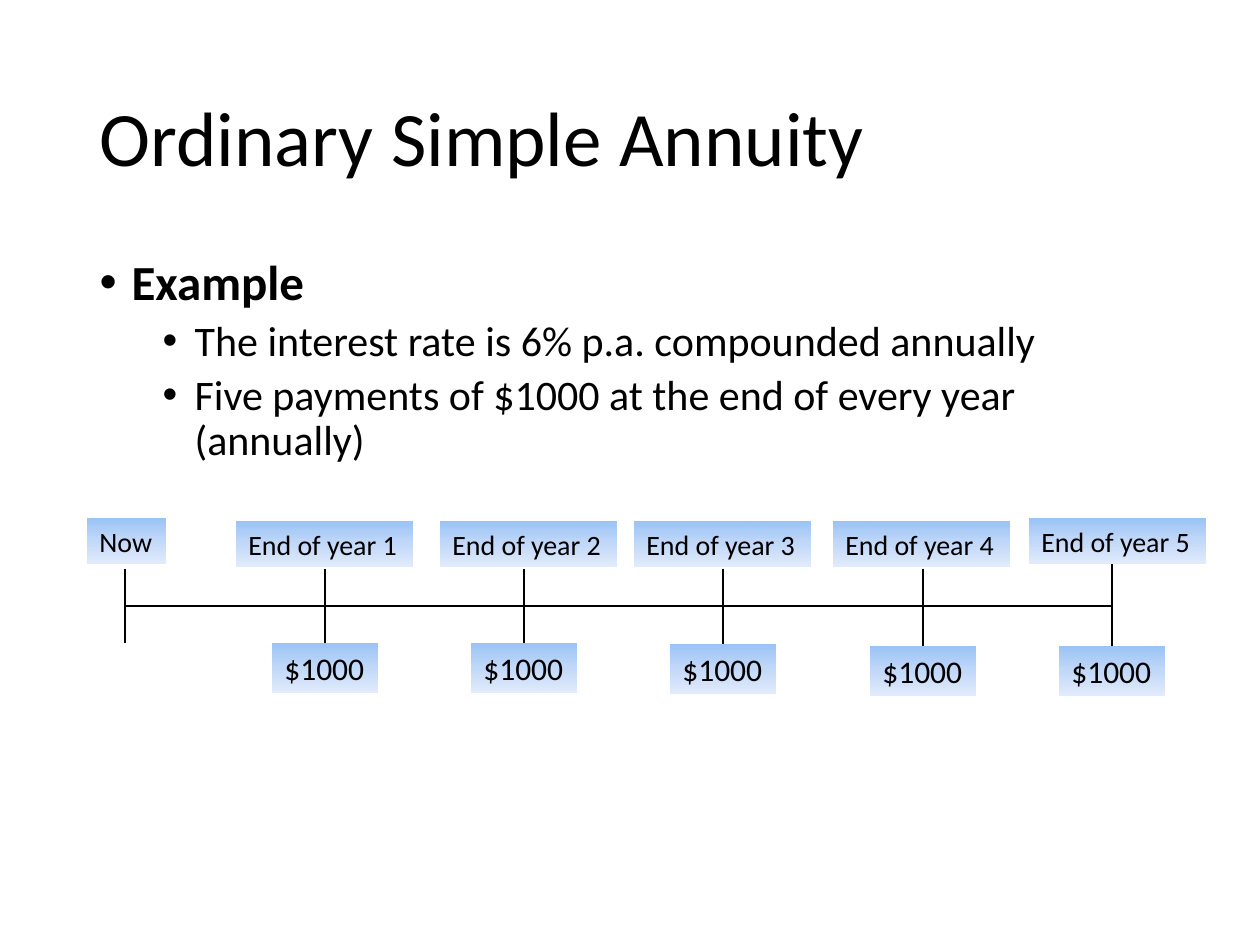
from copy import deepcopy
from dataclasses import dataclass

from lxml import etree
from pptx import Presentation
from pptx.dml.color import RGBColor
from pptx.enum.shapes import MSO_CONNECTOR, MSO_SHAPE
from pptx.enum.text import MSO_ANCHOR, MSO_AUTO_SIZE, PP_ALIGN
from pptx.oxml.ns import qn
from pptx.util import Pt

RECTANGLE = MSO_SHAPE.RECTANGLE
STRAIGHT = MSO_CONNECTOR.STRAIGHT
LEFT = PP_ALIGN.LEFT
MIDDLE = MSO_ANCHOR.MIDDLE
FIT_SHAPE = MSO_AUTO_SIZE.SHAPE_TO_FIT_TEXT
NO_FIT = MSO_AUTO_SIZE.NONE
TOP_SIDE = 0
PX_PER_INCH = 126


def px(length):
    """Turn pixels into EMU."""
    return round(length * 914400 / PX_PER_INCH)


@dataclass(frozen=True)
class Theme:
    font: str = "Calibri"
    ink: str = "000000"
    gradient: tuple = ((0, "9AC3F5"), (0.5, "C2D8F8"), (1, "E1EBFB"))
    title: int = 44
    heading: int = 28
    item: int = 24
    payment: int = 18
    label: int = 16
    rule: float = 0.75


def write(para, text, theme, size, bold=False, spacing=None, before=None):
    """Fill a paragraph with one formatted span of text."""
    para.alignment = LEFT
    if spacing is not None:
        para.line_spacing = spacing
    if before is not None:
        para.space_before = Pt(before)
    span = para.add_run()
    span.text = text
    span.font.name = theme.font
    span.font.size = Pt(size)
    span.font.bold = bold
    span.font.color.rgb = RGBColor.from_string(theme.ink)


def set_bullet(para, indent, hanging):
    properties = para._p.get_or_add_pPr()
    properties.set("marL", str(px(indent)))
    properties.set("indent", str(-px(hanging)))
    etree.SubElement(properties, qn("a:buFont")).set("typeface", "Arial")
    etree.SubElement(properties, qn("a:buChar")).set("char", "•")


class SlideBuilder:
    """Holds the theme and the current slide."""

    def __init__(self, page, theme):
        self.page = page
        self.theme = theme
        self.timeline = page.shapes.add_group_shape()

    def place(self, box, left, top, width, height):
        box.left, box.top, box.width, box.height = map(px, (left, top, width, height))
        box.text_frame.word_wrap = True
        box.text_frame.auto_size = NO_FIT

    def title(self, text, *area):
        box = self.page.shapes.title
        self.place(box, *area)
        box.text_frame.vertical_anchor = MIDDLE
        write(box.text_frame.paragraphs[0], text, self.theme, self.theme.title, spacing=0.9)

    def body(self, heading, items, *area):
        box = self.page.placeholders[1]
        self.place(box, *area)
        frame = box.text_frame
        first = frame.paragraphs[0]
        write(first, heading, self.theme, self.theme.heading, bold=True, spacing=0.9, before=10)
        set_bullet(first, 32, 32)
        for item in items:
            para = frame.add_paragraph()
            para.level = 1
            write(para, item, self.theme, self.theme.item, spacing=0.9, before=5)
            set_bullet(para, 95, 32)

    def tag(self, text, size, left, top, width, height):
        box = self.timeline.shapes.add_shape(RECTANGLE, *map(px, (left, top, width, height)))
        box.shadow.inherit = False
        box.line.fill.background()
        self.shade(box.fill)
        frame = box.text_frame
        frame.word_wrap = False
        frame.auto_size = FIT_SHAPE
        write(frame.paragraphs[0], text, self.theme, size)
        return box

    def shade(self, fill):
        """Apply the theme's gradient, running from top to bottom."""
        fill.gradient()
        fill.gradient_angle = 270
        first = fill.gradient_stops[0]._gs
        first.addnext(deepcopy(first))
        for stop, (position, color) in zip(fill.gradient_stops, self.theme.gradient):
            stop.position = position
            stop.color.rgb = RGBColor.from_string(color)

    def line(self, x1, y1, x2, y2, end_box=None):
        rule = self.timeline.shapes.add_connector(STRAIGHT, *map(px, (x1, y1, x2, y2)))
        rule.line.color.rgb = RGBColor.from_string(self.theme.ink)
        rule.line.width = Pt(self.theme.rule)
        etree.SubElement(rule._element.spPr, qn("a:effectLst"))
        if end_box is not None:
            rule.end_connect(end_box, TOP_SIDE)


def main():
    theme = Theme()
    deck = Presentation()
    deck.slide_width, deck.slide_height = px(1260), px(945)
    slide = SlideBuilder(deck.slides.add_slide(deck.slide_layouts[1]), theme)

    slide.title("Ordinary Simple Annuity", 87, 50, 1086, 183)
    slide.body(
        "Example",
        ["The interest rate is 6% p.a. compounded annually",
         "Five payments of $1000 at the end of every year (annually)"],
        87, 252, 1086, 600,
    )

    start, end, axis = 125, 1112, 606
    tick_top, tick_bottom = 569, 643
    slide.line(start, axis, end, axis)
    slide.line(start, tick_top, start, tick_bottom)
    slide.tag("Now", theme.label, 87, 518, 79, 46)

    # tick x, tick top, label left, label top, payment top
    years = [
        (325, tick_top, 236, 521, 643),
        (524, tick_top, 440, 521, 643),
        (723, tick_top, 634, 521, 644),
        (923, tick_top, 833, 521, 646),
        (end, 564, 1029, 518, 646),
    ]
    payment_width = 106
    for year, (x, top, label_left, label_top, payment_top) in enumerate(years, 1):
        slide.tag(f"End of year {year}", theme.label, label_left, label_top, 177, 46)
        payment = slide.tag("$1000", theme.payment, x - payment_width // 2, payment_top,
                            payment_width, 50)
        slide.line(x, top, x, payment_top, end_box=payment)

    deck.save("out.pptx")


if __name__ == "__main__":
    main()
